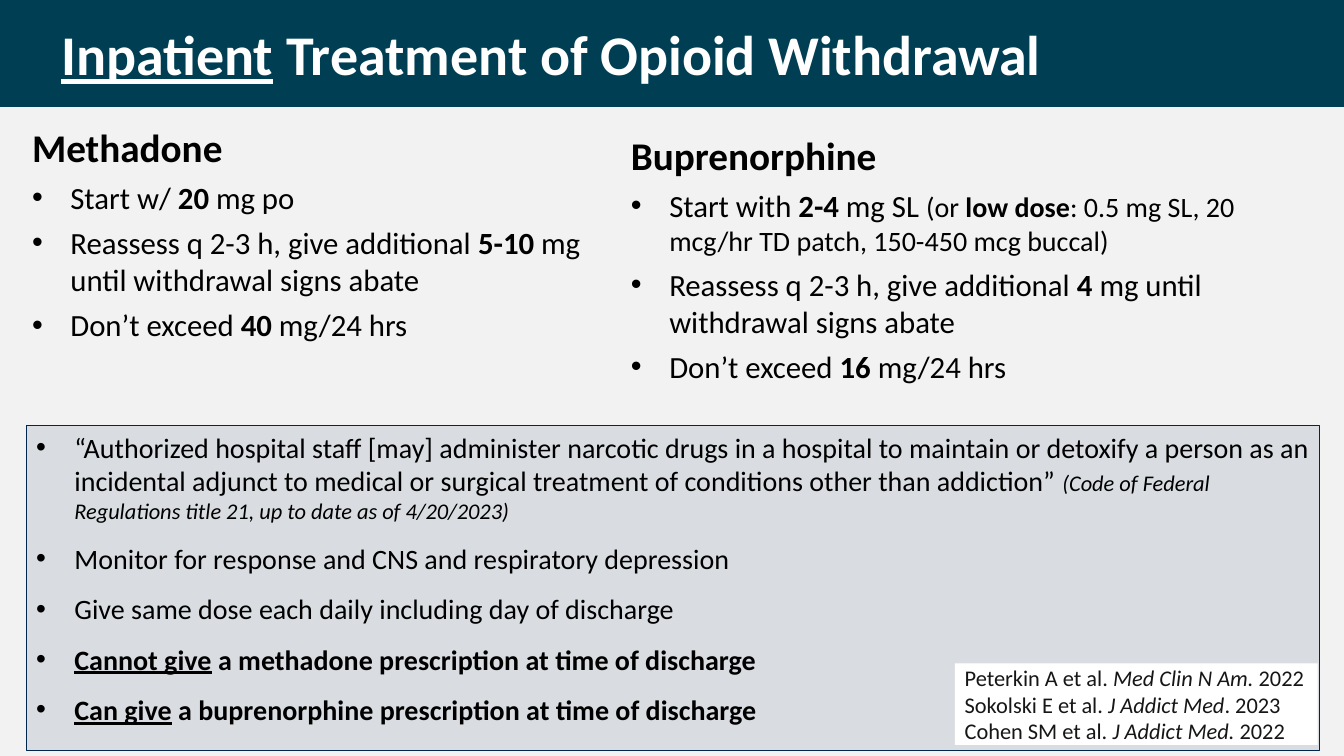
from dataclasses import dataclass

from pptx import Presentation
from pptx.dml.color import RGBColor
from pptx.enum.shapes import MSO_SHAPE
from pptx.enum.text import MSO_ANCHOR, MSO_AUTO_SIZE, PP_ALIGN
from pptx.oxml.ns import qn
from pptx.util import Inches, Pt

RECT = MSO_SHAPE.RECTANGLE
MIDDLE, TOP = MSO_ANCHOR.MIDDLE, MSO_ANCHOR.TOP
LEFT = PP_ALIGN.LEFT
FIXED = MSO_AUTO_SIZE.NONE
TITLE_ONLY = 5


@dataclass
class Theme:
    font: str = "Calibri"
    back: str = "F2F2F2"
    banner: str = "003F53"
    navy: str = "00264D"
    white: str = "FFFFFF"
    black: str = "000000"
    gray: str = "161616"
    title: int = 40
    head: int = 28
    dose: int = 22
    note: int = 20
    cite: int = 16
    indent: float = 0.38


class Deck:
    def __init__(self, theme):
        self.theme = theme
        self.show = Presentation()
        self.show.slide_width = Inches(13.33)
        self.show.slide_height = Inches(7.5)
        self.slide = self.show.slides.add_slide(self.show.slide_layouts[TITLE_ONLY])
        self.paint(self.slide.background, theme.back)

    def paint(self, item, color):
        item.fill.solid()
        item.fill.fore_color.rgb = RGBColor.from_string(color)

    def frame(self, shape, anchor=TOP, wrap=True):
        frame = shape.text_frame
        frame.auto_size = FIXED
        frame.word_wrap = wrap
        frame.vertical_anchor = anchor
        return frame

    def line(self, para, runs, size, color, gap=0):
        """Fill a paragraph with (text, marks[, size]) runs; marks are b, i and u."""
        para.alignment = LEFT
        para.space_before = Pt(gap)
        for text, marks, *own in runs:
            run = para.add_run()
            run.text = text
            font = run.font
            font.name = self.theme.font
            font.size = Pt(own[0] if own else size)
            font.color.rgb = RGBColor.from_string(color)
            font.bold, font.italic, font.underline = (m in marks for m in "biu")

    def bullet(self, para):
        props = para._p.get_or_add_pPr()
        indent = Inches(self.theme.indent)
        props.set("marL", str(indent))
        props.set("indent", str(-indent))
        for tag, key, value in (("a:buFont", "typeface", "Arial"), ("a:buChar", "char", "•")):
            node = props.makeelement(qn(tag), {key: value})
            props.append(node)

    def lines(self, frame, rows, size, color, gap=0, dots=True):
        for row in rows:
            first = not frame.paragraphs[0].runs
            para = frame.paragraphs[0] if first else frame.add_paragraph()
            self.line(para, row, size, color, gap)
            if dots:
                self.bullet(para)

    def title(self, runs, box):
        shape = self.slide.shapes.title
        shape.left, shape.top, shape.width, shape.height = map(Inches, box)
        self.paint(shape, self.theme.banner)
        para = self.frame(shape, MIDDLE).paragraphs[0]
        self.line(para, runs, self.theme.title, self.theme.white)
        para._p.get_or_add_pPr().set("marL", str(Inches(0.51)))

    def panel(self, box, fill, anchor=TOP, wrap=True, edge=None, alpha=None):
        shape = self.slide.shapes.add_shape(RECT, *map(Inches, box))
        shape.shadow.inherit = False
        self.paint(shape, fill)
        if alpha:
            tint = shape._element.spPr.find(qn("a:solidFill"))[0]
            tint.append(tint.makeelement(qn("a:alpha"), {"val": str(alpha * 1000)}))
        if edge:
            shape.line.color.rgb = RGBColor.from_string(edge)
            shape.line.width = Pt(0.75)
        else:
            shape.line.fill.background()
        return self.frame(shape, anchor, wrap)

    def drug(self, name, rows, box):
        theme = self.theme
        frame = self.frame(self.slide.shapes.add_textbox(*map(Inches, box)))
        self.lines(frame, [[(name, "b")]], theme.head, theme.black, 6, dots=False)
        self.lines(frame, rows, theme.dose, theme.black, 6)


def steps(start, more, limit):
    """Give the three dosing rows shared by both drugs."""
    return [
        start,
        [("Reassess q 2-3 h, give additional ", ""), (more, "b"),
         (" mg until withdrawal signs abate", "")],
        [("Don’t exceed ", ""), (limit, "b"), (" mg/24 hrs", "")],
    ]


def main():
    theme = Theme()
    deck = Deck(theme)
    deck.title([("Inpatient", "bu"), (" Treatment of Opioid Withdrawal", "b")],
               (0, 0, 13.33, 1.06))

    rules = deck.panel((0.26, 4.22, 12.83, 3.23), theme.navy, edge=theme.navy, alpha=10)
    deck.lines(rules, [
        [("“Authorized hospital staff [may] administer narcotic drugs in a hospital to "
          "maintain or detoxify a person as an incidental adjunct to medical or surgical "
          "treatment of conditions other than addiction” ", ""),
         ("(Code of Federal Regulations title 21, up to date as of 4/20/2023)",
          "i", theme.cite)],
        [("Monitor for response and CNS and respiratory depression", "")],
        [("Give same dose each daily including day of discharge", "")],
        [("Cannot give", "bu"), (" a methadone prescription at time of discharge", "b")],
        [("Can give", "bu"), (" a buprenorphine prescription at time of discharge", "b")],
    ], theme.note, theme.black, 12)

    cites = deck.panel((9.47, 6.58, 3.6, 0.81), theme.white, MIDDLE, wrap=False)
    deck.lines(cites, [
        [("Peterkin A et al. ", ""), ("Med Clin N Am. ", "i"), ("2022", "")],
        [("Sokolski E et al. ", ""), ("J Addict Med", "i"), (". 2023", "")],
        [("Cohen SM et al. ", ""), ("J Addict Med. ", "i"), ("2022", "")],
    ], theme.cite, theme.gray, dots=False)

    first = [("Start w/ ", ""), ("20", "b"), (" mg po", "")]
    deck.drug("Methadone", steps(first, "5-10", "40"), (0.22, 1.17, 5.77, 2.45))

    first = [("Start with ", ""), ("2-4", "b"), (" mg SL ", ""),
             ("(or ", "", theme.note), ("low dose", "b", theme.note),
             (": 0.5 mg SL, 20 mcg/hr TD patch, 150-450 mcg buccal)", "", theme.note)]
    deck.drug("Buprenorphine", steps(first, "4", "16"), (6.16, 1.25, 6.94, 2.6))

    deck.show.save("out.pptx")


if __name__ == "__main__":
    main()
